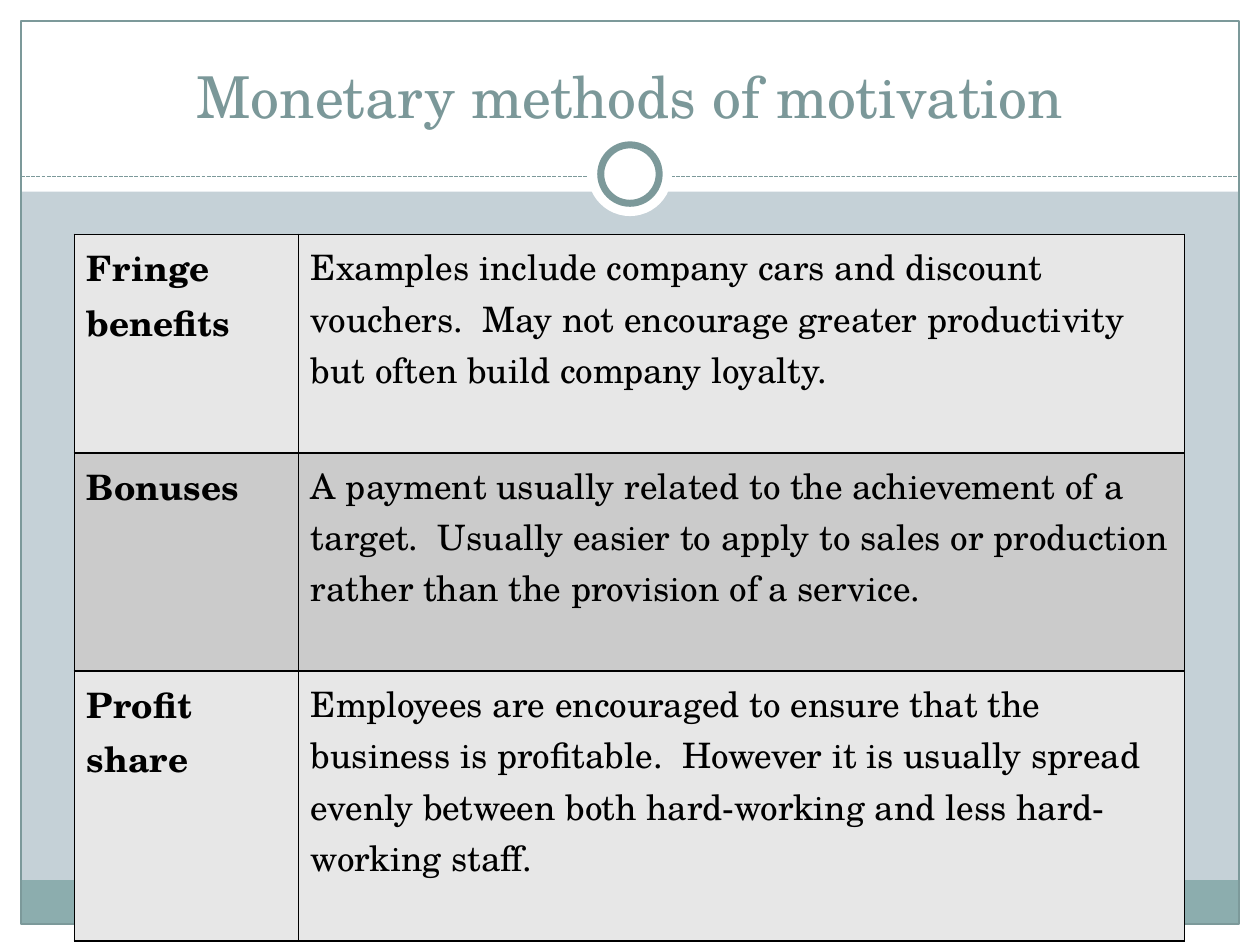
"""Builds the slide on monetary methods of motivation."""
from lxml import etree
from pptx import Presentation
from pptx.dml.color import RGBColor
from pptx.enum import dml, shapes, text
from pptx.oxml import ns
from pptx.util import Pt

FONT = "TeX Gyre Schola"
TITLE = "Monetary methods of motivation"
METHODS = [
    ("Fringe benefits", "Examples include company cars and discount vouchers.  May not "
     "encourage greater productivity but often build company loyalty."),
    ("Bonuses", "A payment usually related to the achievement of a target.  Usually easier "
     "to apply to sales or production rather than the provision of a service."),
    ("Profit share", "Employees are encouraged to ensure that the business is profitable.  "
     "However it is usually spread evenly between both hard-working and less hard-working staff."),
]
ROW_HEIGHTS = [124.8, 124.8, 154.2]
COLUMN_WIDTHS = [128, 506.5]
ROW_FILLS = ["E7E7E7", "CBCBCB"]
WIDTH, HEIGHT, MARGIN = 720, 540, 12
HEADER, RULE_Y = 109.5, 100.8
WHITE, TEAL = "FFFFFF", "7C999A"
RECT, OVAL = shapes.MSO_SHAPE.RECTANGLE, shapes.MSO_SHAPE.OVAL
INNER = WIDTH - 2 * MARGIN
DECOR = [
    (RECT, (0, HEIGHT - MARGIN, WIDTH, MARGIN), WHITE, None),
    (RECT, (0, 0, WIDTH, HEADER), WHITE, None),
    (RECT, (0, 0, MARGIN, HEIGHT), WHITE, None),
    (RECT, (WIDTH - MARGIN, 0, MARGIN, HEIGHT), WHITE, None),
    (RECT, (MARGIN, 503, INNER, 25), "8CADAE", None),
    (RECT, (MARGIN, MARGIN, INNER, HEIGHT - 2 * MARGIN), None, 0.75),
]
RINGS = [
    (OVAL, (336, 75.5, 48, 48), WHITE, None),
    (OVAL, (343.3, 82.8, 33.4, 33.4), WHITE, 4),
]


def color(value):
    return RGBColor.from_string(value)


def paint(fill, value):
    if value:
        fill.solid()
        fill.fore_color.rgb = color(value)
    else:
        fill.background()


def stroke(line, width):
    paint(line.fill, TEAL if width else None)
    if width:
        line.width = Pt(width)


def add_decor(slide, pieces):
    for kind, box, fill, width in pieces:
        piece = slide.shapes.add_shape(kind, *map(Pt, box))
        piece.shadow.inherit = False
        paint(piece.fill, fill)
        stroke(piece.line, width)


def add_rule(slide):
    rule = slide.shapes.add_connector(
        shapes.MSO_CONNECTOR.STRAIGHT, Pt(MARGIN), Pt(RULE_Y), Pt(WIDTH - MARGIN), Pt(RULE_Y))
    stroke(rule.line, 0.75)
    rule.line.dash_style = dml.MSO_LINE.SQUARE_DOT
    etree.SubElement(rule._element.spPr, ns.qn("a:effectLst"))


def write(frame, words, size, value, bold=False):
    run = frame.paragraphs[0].add_run()
    run.text = words
    run.font.name, run.font.size, run.font.bold = FONT, Pt(size), bold
    run.font.color.rgb = color(value)


def add_title(slide):
    title = slide.shapes.title
    title.left, title.top, title.width, title.height = map(Pt, (24, 18, 672, 60))
    slide.shapes._spTree.append(title._element)
    frame = title.text_frame
    frame.word_wrap = True
    frame.vertical_anchor = text.MSO_ANCHOR.BOTTOM
    frame.paragraphs[0].alignment = text.PP_ALIGN.CENTER
    write(frame, TITLE, 33, "7B9899")


def add_borders(cell):
    properties = cell._tc.get_or_add_tcPr()
    for side in ("lnL", "lnR", "lnT", "lnB"):
        border = etree.SubElement(properties, ns.qn("a:" + side), w=str(Pt(1)))
        fill = etree.SubElement(border, ns.qn("a:solidFill"))
        etree.SubElement(fill, ns.qn("a:srgbClr"), val="000000")


def add_methods(slide):
    table = slide.shapes.add_table(
        len(METHODS), len(COLUMN_WIDTHS), Pt(42.5), Pt(134),
        Pt(sum(COLUMN_WIDTHS)), Pt(sum(ROW_HEIGHTS))).table
    table.first_row = table.horz_banding = False
    for column, width in zip(table.columns, COLUMN_WIDTHS):
        column.width = Pt(width)
    for r, (method, height) in enumerate(zip(METHODS, ROW_HEIGHTS)):
        table.rows[r].height = Pt(height)
        for c, words in enumerate(method):
            cell = table.cell(r, c)
            add_borders(cell)
            paint(cell.fill, ROW_FILLS[r % 2])
            write(cell.text_frame, words, 20, "000000", bold=c == 0)


def main():
    deck = Presentation()
    deck.slide_width, deck.slide_height = Pt(WIDTH), Pt(HEIGHT)
    slide = deck.slides.add_slide(deck.slide_layouts[5])
    paint(slide.background.fill, "C5D1D7")
    add_decor(slide, DECOR)
    add_rule(slide)
    add_decor(slide, RINGS)
    add_title(slide)
    add_methods(slide)
    deck.save("out.pptx")


if __name__ == "__main__":
    main()
